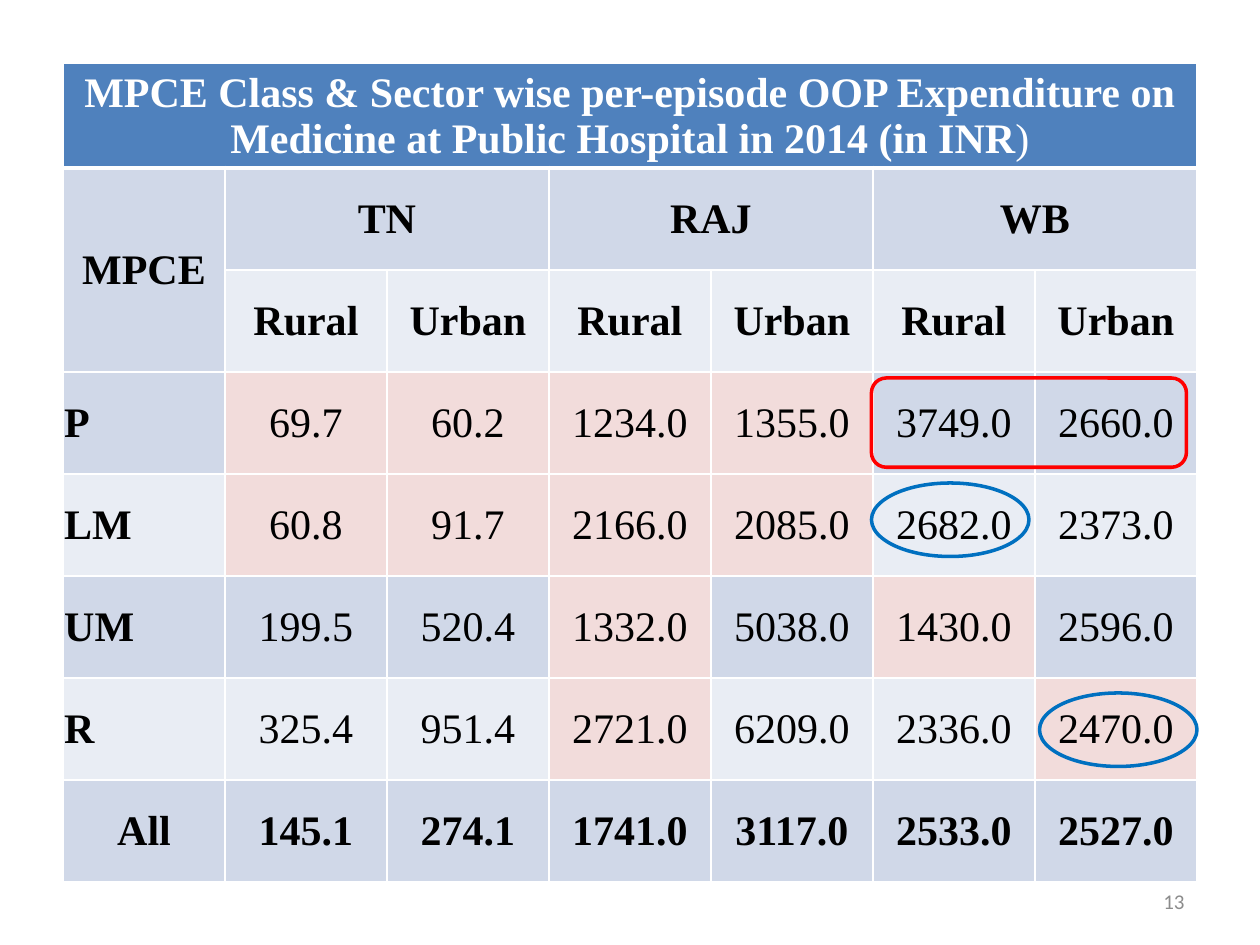
from dataclasses import dataclass
from lxml.etree import SubElement
from pptx import Presentation
from pptx.dml.color import RGBColor
from pptx.enum.shapes import MSO_SHAPE as Shape
from pptx.enum.text import MSO_ANCHOR as Anchor, PP_ALIGN as Align
from pptx.oxml.ns import qn
from pptx.util import Inches, Pt


@dataclass(frozen=True)
class Theme:
    header: str = "4F81BD"
    band_dark: str = "D0D8E8"
    band_light: str = "E9EDF4"
    pink: str = "F2DCDB"
    white: str = "FFFFFF"
    black: str = "000000"
    gray: str = "8C8C8C"
    red: str = "FF0000"
    blue: str = "0070C0"
    serif: str = "Times New Roman"
    sans: str = "Calibri"
    table_size: int = 24
    number_size: int = 12


THEME = Theme()
COLS, ROWS = 120, 90  # slide grid, twelve units to the inch
TITLE_ROWS = 10

TITLE = [("MPCE Class & Sector wise per-episode OOP Expenditure on "
          "Medicine at Public Hospital in 2014 (in INR", True), (")", False)]
STATES = ["TN", "RAJ", "WB"]
SECTORS = ["Rural", "Urban"]
# MPCE class, expenditure by state and sector, columns shaded pink
CLASSES = [
    ("P", "69.7 60.2 1234.0 1355.0 3749.0 2660.0", {1, 2, 3, 4}),
    ("LM", "60.8 91.7 2166.0 2085.0 2682.0 2373.0", {1, 2, 3, 4}),
    ("UM", "199.5 520.4 1332.0 5038.0 1430.0 2596.0", {3, 5}),
    ("R", "325.4 951.4 2721.0 6209.0 2336.0 2470.0", {3, 6}),
    ("All", "145.1 274.1 1741.0 3117.0 2533.0 2527.0", set()),
]
# Outline, box on the slide grid, line colour
HIGHLIGHTS = [
    (Shape.ROUNDED_RECTANGLE, (83, 36, 30, 8.5), THEME.red),
    (Shape.OVAL, (83, 46, 15, 7), THEME.blue),
    (Shape.OVAL, (99, 66, 15, 7), THEME.blue),
]


def units(count):
    return Inches(count / 12)


def place(box):
    return [units(side) for side in box]


def write(paragraph, runs, font, size, color, align):
    paragraph.alignment = align
    for words, bold in runs:
        run = paragraph.add_run()
        run.text = words
        run.font.name, run.font.size, run.font.bold = font, Pt(size), bold
        run.font.color.rgb = RGBColor.from_string(color)


def style_cell(cell, fill, top=1, bottom=1):
    """Set margins, white borders and fill."""
    cell.margin_left = cell.margin_right = cell.margin_top = Inches(0.01)
    cell.margin_bottom = 0
    cell.vertical_anchor = Anchor.MIDDLE
    properties = cell._tc.get_or_add_tcPr()
    for side, width in (("L", 1), ("R", 1), ("T", top), ("B", bottom)):
        border = SubElement(properties, qn(f"a:ln{side}"), w=str(Pt(width)))
        paint = SubElement(border, qn("a:solidFill"))
        SubElement(paint, qn("a:srgbClr"), val=THEME.white)
    cell.fill.solid()
    cell.fill.fore_color.rgb = RGBColor.from_string(fill)


def fill_cell(cell, runs, color=THEME.black, align=Align.CENTER):
    write(cell.text_frame.paragraphs[0], runs, THEME.serif,
          THEME.table_size, color, align)


def add_expenditure_table(slide, box):
    row_count, col_count = 3 + len(CLASSES), 1 + len(STATES) * len(SECTORS)
    table = slide.shapes.add_table(row_count, col_count, *place(box)).table
    for column in table.columns:
        column.width = units(box[2] / col_count)
    body_height = (box[3] - TITLE_ROWS) / (row_count - 1)
    for index, row in enumerate(table.rows):
        row.height = units(body_height if index else TITLE_ROWS)

    # Banded fills, with a heavy rule under the title
    for r in range(row_count):
        band = THEME.band_dark if r % 2 else THEME.band_light
        shaded = CLASSES[r - 3][2] if r >= 3 else set()
        for c in range(col_count):
            fill = THEME.header if r == 0 else THEME.pink if c in shaded else band
            style_cell(table.cell(r, c), fill, top=3 if r == 1 else 1,
                       bottom=3 if r == 0 else 1)

    # Title and column headings
    table.cell(0, 0).merge(table.cell(0, col_count - 1))
    fill_cell(table.cell(0, 0), TITLE, THEME.white)
    table.cell(1, 0).merge(table.cell(2, 0))
    fill_cell(table.cell(1, 0), [("MPCE", True)])
    for s, state in enumerate(STATES):
        first = 1 + s * len(SECTORS)
        table.cell(1, first).merge(table.cell(1, first + len(SECTORS) - 1))
        fill_cell(table.cell(1, first), [(state, True)])
        for offset, sector in enumerate(SECTORS):
            fill_cell(table.cell(2, first + offset), [(sector, True)])

    # Expenditure by class
    for r, (mpce, amounts, _) in enumerate(CLASSES, start=3):
        is_total = mpce == "All"
        fill_cell(table.cell(r, 0), [(mpce, True)],
                  align=Align.CENTER if is_total else Align.LEFT)
        for c, amount in enumerate(amounts.split(), start=1):
            fill_cell(table.cell(r, c), [(amount, is_total)])


def add_page_number(slide, box, number):
    frame = slide.shapes.add_textbox(*place(box)).text_frame
    frame.word_wrap = True
    frame.vertical_anchor = Anchor.MIDDLE
    write(frame.paragraphs[0], [(number, False)], THEME.sans,
          THEME.number_size, THEME.gray, Align.RIGHT)


def add_highlight(slide, outline, box, color):
    highlight = slide.shapes.add_shape(outline, *place(box))
    highlight.shadow.inherit = False
    highlight.fill.background()
    highlight.line.color.rgb = RGBColor.from_string(color)
    highlight.line.width = Pt(2)


def main():
    deck = Presentation()
    deck.slide_width, deck.slide_height = units(COLS), units(ROWS)
    slide = deck.slides.add_slide(deck.slide_layouts[6])
    add_expenditure_table(slide, (6, 6, COLS - 12, ROWS - 12))
    add_page_number(slide, (86, 83.4, 28, 4.8), "13")
    for outline, box, color in HIGHLIGHTS:
        add_highlight(slide, outline, box, color)
    deck.save("out.pptx")


if __name__ == "__main__":
    main()
